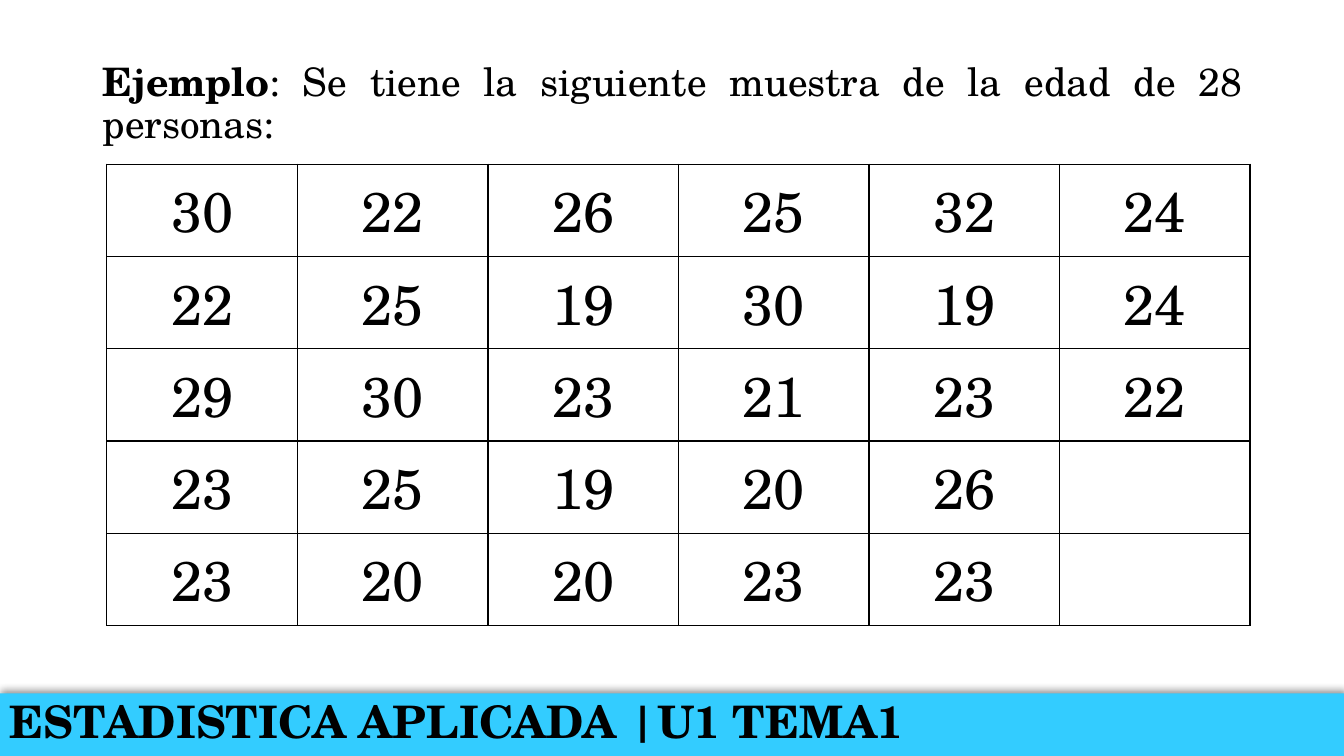
from dataclasses import dataclass
from lxml import etree
from pptx import Presentation
from pptx.dml.color import RGBColor
from pptx.enum.shapes import MSO_SHAPE
from pptx.enum.text import MSO_ANCHOR, PP_ALIGN
from pptx.oxml import parse_xml
from pptx.oxml.ns import nsdecls, qn
from pptx.util import Inches, Pt

RECTANGLE = MSO_SHAPE.RECTANGLE
MIDDLE = MSO_ANCHOR.MIDDLE
CENTER, JUSTIFY, LEFT = PP_ALIGN.CENTER, PP_ALIGN.JUSTIFY, PP_ALIGN.LEFT

# Content
STATEMENT = [
    ("Ejemplo", True),
    (": Se tiene la siguiente muestra de la edad de 28 personas:", False),
]
AGES = [
    (30, 22, 26, 25, 32, 24),
    (22, 25, 19, 30, 19, 24),
    (29, 30, 23, 21, 23, 22),
    (23, 25, 19, 20, 26, ""),
    (23, 20, 20, 23, 23, ""),
]
COURSE = [("ESTADISTICA APLICADA |U1 TEMA1", True)]


@dataclass(frozen=True)
class Theme:
    font: str = "TeX Gyre Schola"
    ink: str = "000000"
    band: str = "33CCFF"
    statement_size: int = 28
    course_size: int = 32
    age_size: int = 40


THEME = Theme()

# Layout, in inches
SLIDE_W, SLIDE_H = 13.33, 7.5
BAND_H = 0.62
COURSE_H = 0.6
STATEMENT_BOX = (0.92, 0.57, 11.5, 1.0)
GRID_LEFT, GRID_TOP = 1.06, 1.63
COLUMN_W, ROW_H = 1.89, 0.915


def inches(*lengths):
    return [Inches(length) for length in lengths]


def write(paragraph, pieces, size, align, spacing=None):
    paragraph.alignment = align
    paragraph.line_spacing = spacing
    for words, bold in pieces:
        run = paragraph.add_run()
        run.text = words
        run.font.name = THEME.font
        run.font.size = Pt(size)
        run.font.bold = bold
        run.font.color.rgb = RGBColor.from_string(THEME.ink)


def add_text(slide, box, pieces, size, align):
    frame = slide.shapes.add_textbox(*inches(*box)).text_frame
    frame.word_wrap = True
    write(frame.paragraphs[0], pieces, size, align, 0.9)
    return frame


def add_borders(cell):
    properties = cell._tc.get_or_add_tcPr()
    for position, side in enumerate(("lnL", "lnR", "lnT", "lnB")):
        line = parse_xml(
            f'<a:{side} {nsdecls("a")} w="{Pt(1)}"><a:solidFill>'
            f'<a:srgbClr val="{THEME.ink}"/></a:solidFill></a:{side}>')
        properties.insert(position, line)


def add_band(slide):
    band = slide.shapes.add_shape(
        RECTANGLE, *inches(0, SLIDE_H - BAND_H, SLIDE_W, BAND_H))
    band.fill.solid()
    band.fill.fore_color.rgb = RGBColor.from_string(THEME.band)
    band.line.fill.background()
    band.shadow.inherit = False
    # Soft shadow cast upwards
    effects = band._element.spPr.find(qn("a:effectLst"))
    shadow = etree.SubElement(
        effects, qn("a:outerShdw"), blurRad=str(Pt(4)), dist=str(Pt(3)),
        dir=str(270 * 60000), algn="b", rotWithShape="0")
    color = etree.SubElement(shadow, qn("a:srgbClr"), val=THEME.ink)
    etree.SubElement(color, qn("a:alpha"), val="40000")


def add_ages(slide):
    rows, columns = len(AGES), len(AGES[0])
    grid = slide.shapes.add_table(rows, columns, *inches(
        GRID_LEFT, GRID_TOP, columns * COLUMN_W, rows * ROW_H)).table
    grid.first_row = grid.horz_banding = False
    for row, ages in enumerate(AGES):
        for column, age in enumerate(ages):
            cell = grid.cell(row, column)
            cell.fill.background()
            cell.vertical_anchor = MIDDLE
            add_borders(cell)
            if age:
                write(cell.text_frame.paragraphs[0], [(str(age), False)],
                      THEME.age_size, CENTER)


def main():
    deck = Presentation()
    deck.slide_width, deck.slide_height = inches(SLIDE_W, SLIDE_H)
    slide = deck.slides.add_slide(deck.slide_layouts[6])

    # Statement of the example
    add_text(slide, STATEMENT_BOX, STATEMENT, THEME.statement_size, JUSTIFY)

    # Footer band with the course name
    add_band(slide)
    course = add_text(slide, (0, SLIDE_H - BAND_H, SLIDE_W, COURSE_H),
                      COURSE, THEME.course_size, LEFT)
    course.vertical_anchor = MIDDLE

    # Sample of ages
    add_ages(slide)
    deck.save("out.pptx")


if __name__ == "__main__":
    main()
